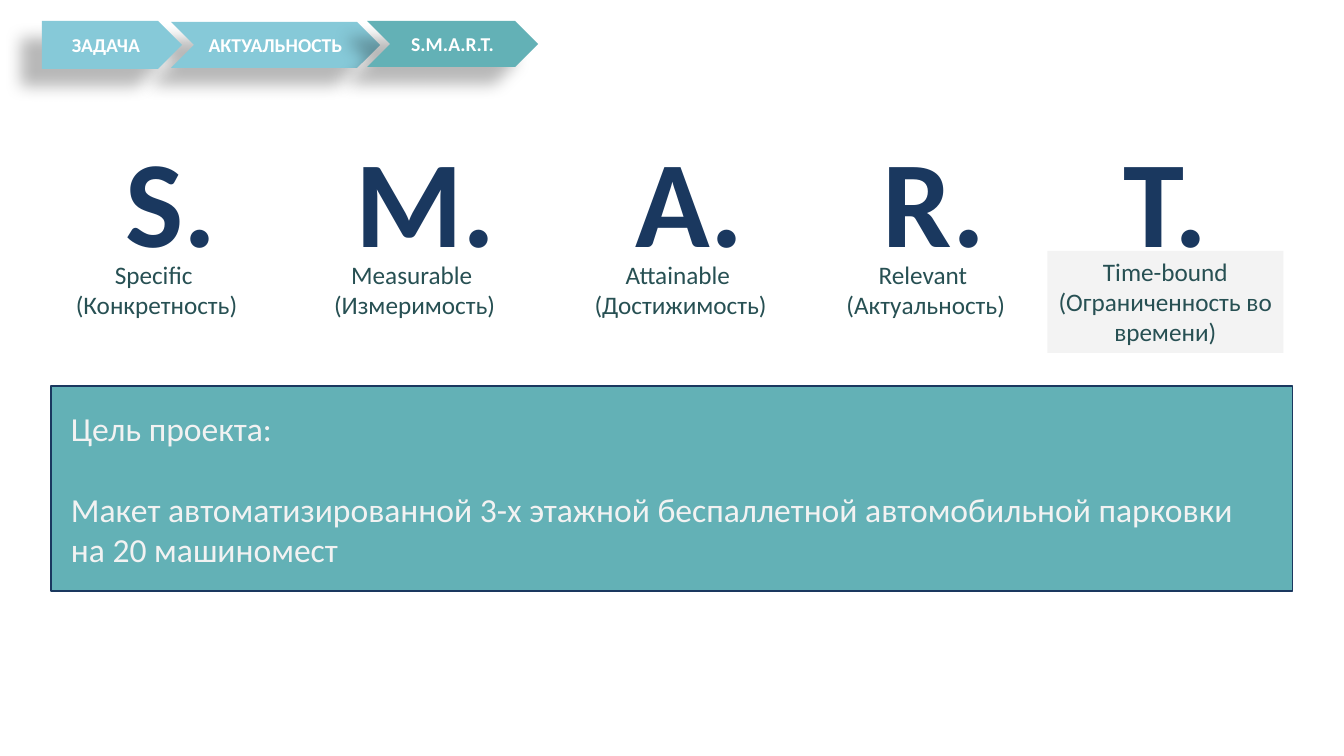
"""Builds the S.M.A.R.T. project goal slide."""
import pptx
import pptx.dml.color
import pptx.enum.shapes
import pptx.enum.text
import pptx.oxml
import pptx.oxml.ns
import pptx.util

RGB = pptx.dml.color.RGBColor
WHITE = RGB(0xFF, 0xFF, 0xFF)
PALE = RGB(0xF2, 0xF2, 0xF2)
PANEL_GREY = RGB(0xF3, 0xF3, 0xF3)
SKY = RGB(0x86, 0xC9, 0xD8)
TEAL = RGB(0x63, 0xB1, 0xB6)
DARK_TEAL = RGB(0x27, 0x50, 0x53)
NAVY = RGB(0x1A, 0x38, 0x5F)

SHAPE = pptx.enum.shapes.MSO_SHAPE
ALIGN = pptx.enum.text.PP_ALIGN
ANCHOR = pptx.enum.text.MSO_ANCHOR
NS = pptx.oxml.ns.nsdecls("a")
SHADOW = (
    f'<a:effectLst {NS}><a:outerShdw blurRad="149860" dist="250190" dir="8460000" '
    'algn="ctr" rotWithShape="0"><a:srgbClr val="000000"><a:alpha val="28000"/>'
    "</a:srgbClr></a:outerShdw></a:effectLst>"
)


class GoalSlide:
    """Holds the style and the current slide."""

    font_name = "Calibri"
    scale = 914400 / 100.8

    def __init__(self, deck):
        self.slide = deck.slides.add_slide(deck.slide_layouts[5])

    def emu(self, px):
        return pptx.util.Emu(round(px * self.scale))

    def fill_text(self, holder, lines, size, color, align=ALIGN.LEFT, anchor=ANCHOR.TOP,
                  bold=False, gap=0, tabs=()):
        frame = holder.text_frame
        frame.word_wrap = True
        frame.auto_size = pptx.enum.text.MSO_AUTO_SIZE.NONE
        frame.vertical_anchor = anchor
        font_format = {"name": self.font_name, "size": pptx.util.Pt(size), "bold": bold}
        for index, line in enumerate(lines):
            paragraph = frame.paragraphs[0] if index == 0 else frame.add_paragraph()
            paragraph.alignment = align
            if index:
                paragraph.space_before = pptx.util.Pt(gap)
            if tabs:
                stops = "".join(f'<a:tab pos="{self.emu(x)}" algn="l"/>' for x in tabs)
                paragraph._p.get_or_add_pPr().append(
                    pptx.oxml.parse_xml(f"<a:tabLst {NS}>{stops}</a:tabLst>"))
            run = paragraph.add_run()
            run.text = line
            for key, value in font_format.items():
                setattr(run.font, key, value)
            run.font.color.rgb = color

    def title(self, box, letters, tabs):
        heading = self.slide.shapes.title
        for side, px in zip(("left", "top", "width", "height"), box):
            setattr(heading, side, self.emu(px))
        self.fill_text(heading, ["\t".join(letters)], 88, NAVY, bold=True, tabs=tabs)

    def panel(self, kind, box, fill, line=None):
        panel = self.slide.shapes.add_shape(kind, *map(self.emu, box))
        panel.shadow.inherit = False
        panel.fill.solid()
        panel.fill.fore_color.rgb = fill
        if line is None:
            panel.line.fill.background()
        else:
            panel.line.color.rgb = line
            panel.line.width = pptx.util.Pt(1)
        return panel

    def step(self, kind, box, fill, caption):
        step = self.panel(kind, box, fill)
        properties = step._element.spPr
        properties.remove(properties.find(pptx.oxml.ns.qn("a:effectLst")))
        properties.append(pptx.oxml.parse_xml(SHADOW))
        self.fill_text(step, [caption], 14, WHITE, ALIGN.CENTER, ANCHOR.MIDDLE, bold=True)

    def text(self, box, lines, size, color, **layout):
        holder = self.slide.shapes.add_textbox(*map(self.emu, box))
        self.fill_text(holder, lines, size, color, **layout)


def main():
    deck = pptx.Presentation()
    deck.slide_width = pptx.util.Inches(13.33)
    deck.slide_height = pptx.util.Inches(7.5)
    goal = GoalSlide(deck)

    goal.title((115, 119, 1114, 159), ["S.", "M.", "A.", "R.", "T."],
               tabs=(230, 510, 757, 998))

    for kind, box, fill, caption in (
        (SHAPE.CHEVRON, (171, 22, 209, 46), SKY, "АКТУАЛЬНОСТЬ"),
        (SHAPE.CHEVRON, (367, 21, 171, 46), TEAL, "S.M.A.R.T."),
        (SHAPE.PENTAGON, (42, 21, 140, 48), SKY, "ЗАДАЧА"),
    ):
        goal.step(kind, box, fill, caption)

    for left, width, criterion, meaning in (
        (61, 191, "Specific ", "(Конкретность)"),
        (319, 191, "Measurable ", "(Измеримость)"),
        (576, 209, "Attainable ", "(Достижимость)"),
        (830, 191, "Relevant ", "(Актуальность)"),
    ):
        goal.text((left, 254, width, 72), [criterion, meaning], 18, DARK_TEAL,
                  align=ALIGN.CENTER)

    deadline = goal.panel(SHAPE.RECTANGLE, (1047, 251, 236, 102), PANEL_GREY)
    goal.fill_text(deadline, ["Time-bound", "(Ограниченность во времени)"], 18, DARK_TEAL,
                   ALIGN.CENTER)

    goal.panel(SHAPE.RECTANGLE, (51, 386, 1241, 205), TEAL, NAVY)
    goal.text((61, 403, 1222, 173), [
        "Цель проекта:",
        "Макет автоматизированной 3-х этажной беспаллетной автомобильной парковки "
        "на 20 машиномест",
    ], 24, PALE, gap=29)

    deck.save("out.pptx")


if __name__ == "__main__":
    main()
